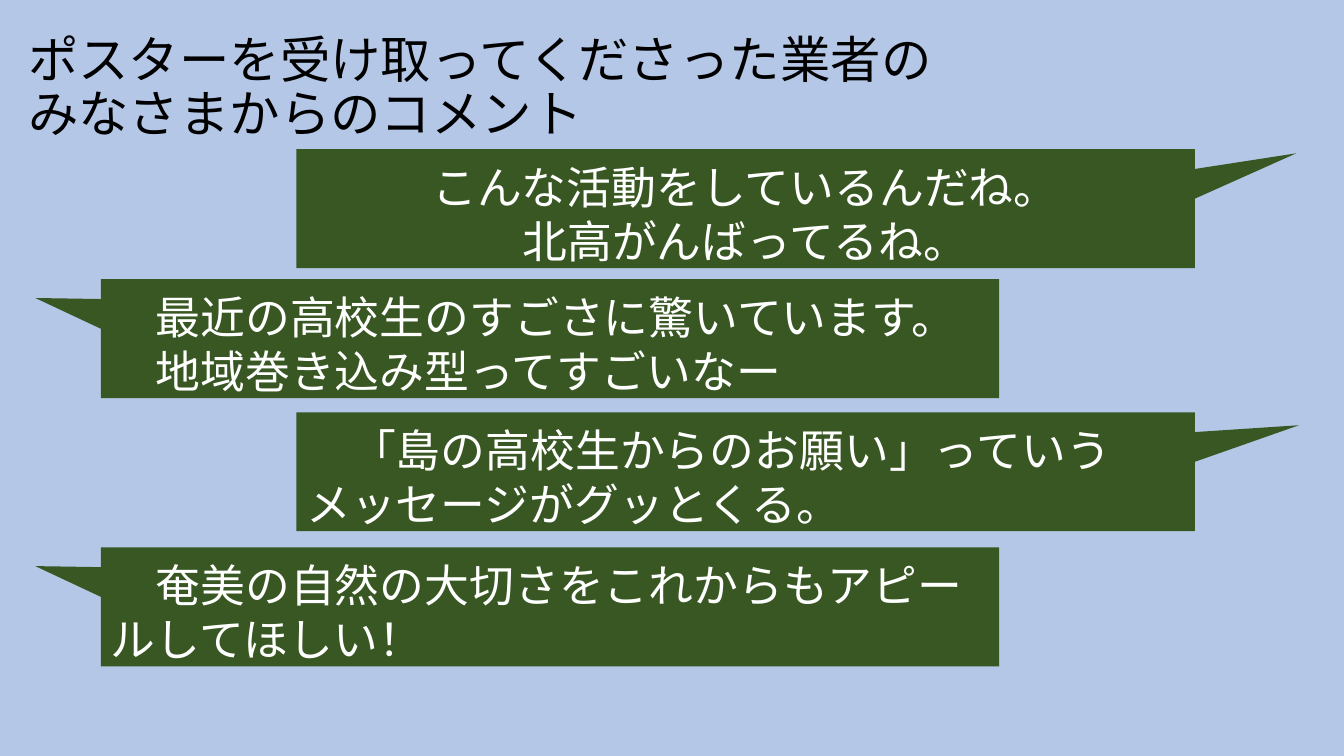
from lxml import etree
from pptx import Presentation
from pptx.dml.color import RGBColor
from pptx.enum.shapes import MSO_SHAPE as Shape
from pptx.enum.text import MSO_ANCHOR as Anchor, PP_ALIGN as Align
from pptx.oxml.ns import qn
from pptx.util import Inches, Pt

FONT = "Noto Sans CJK JP"
BACKGROUND, BUBBLE, TITLE, COMMENT = "B4C7E7", "385723", "000000", "FFFFFF"
BUBBLE_WIDTH, BUBBLE_HEIGHT = 8.91, 1.18
LEFT_COLUMN, RIGHT_COLUMN = 1, 2.94

COMMENTS = [
    (RIGHT_COLUMN, 1.48, (0.613, -0.465), Align.CENTER,
     ["こんな活動をしているんだね。", "北高がんばってるね。"]),
    (LEFT_COLUMN, 2.77, (-0.573, -0.342), Align.LEFT,
     ["　最近の高校生のすごさに驚いています。", "　地域巻き込み型ってすごいなー"]),
    (RIGHT_COLUMN, 4.09, (0.616, -0.391), Align.LEFT,
     ["　「島の高校生からのお願い」っていうメッセージがグッとくる。"]),
    (LEFT_COLUMN, 5.43, (-0.573, -0.342), Align.LEFT,
     ["　奄美の自然の大切さをこれからもアピールしてほしい！"]),
]


def paint(fill, color):
    fill.solid()
    fill.fore_color.rgb = RGBColor.from_string(color)


def write(frame, lines, size, color, align, frame_format):
    for name, value in frame_format.items():
        setattr(frame, name, value)
    frame.text = "\n".join(lines)
    for para in frame.paragraphs:
        para.alignment = align
        para.line_spacing = Pt(38.6)
        for span in para.runs:
            for name, value in {"size": Pt(size), "name": FONT}.items():
                setattr(span.font, name, value)
            span.font.color.rgb = RGBColor.from_string(color)
            properties = span.font._element
            east_asian = etree.Element(qn("a:ea"), typeface=FONT)
            properties.find(qn("a:latin")).addnext(east_asian)


def add_title(page, left, top, width, height):
    box = page.shapes.add_textbox(*map(Inches, (left, top, width, height)))
    write(box.text_frame,
          ["ポスターを受け取ってくださった業者の\vみなさまからのコメント"],
          36, TITLE, Align.LEFT,
          {"word_wrap": True, "vertical_anchor": Anchor.TOP,
           "margin_top": Inches(0.09)})


def add_comment(page, left, top, tip, align, lines):
    bubble = page.shapes.add_shape(
        Shape.RECTANGULAR_CALLOUT,
        *map(Inches, (left, top, BUBBLE_WIDTH, BUBBLE_HEIGHT)))
    bubble.shadow.inherit = False
    bubble.adjustments[0], bubble.adjustments[1] = tip
    paint(bubble.fill, BUBBLE)
    bubble.line.fill.background()
    write(bubble.text_frame, lines, 32, COMMENT, align,
          {"word_wrap": True, "vertical_anchor": Anchor.MIDDLE,
           "margin_top": Inches(0.1), "margin_bottom": 0})


def main():
    deck = Presentation()
    deck.slide_width, deck.slide_height = Inches(13.33), Inches(7.5)
    page = deck.slides.add_slide(deck.slide_layouts[6])
    paint(page.background.fill, BACKGROUND)
    add_title(page, 0.18, 0.25, 11.5, 1.45)
    for comment in COMMENTS:
        add_comment(page, *comment)
    deck.save("out.pptx")


if __name__ == "__main__":
    main()
